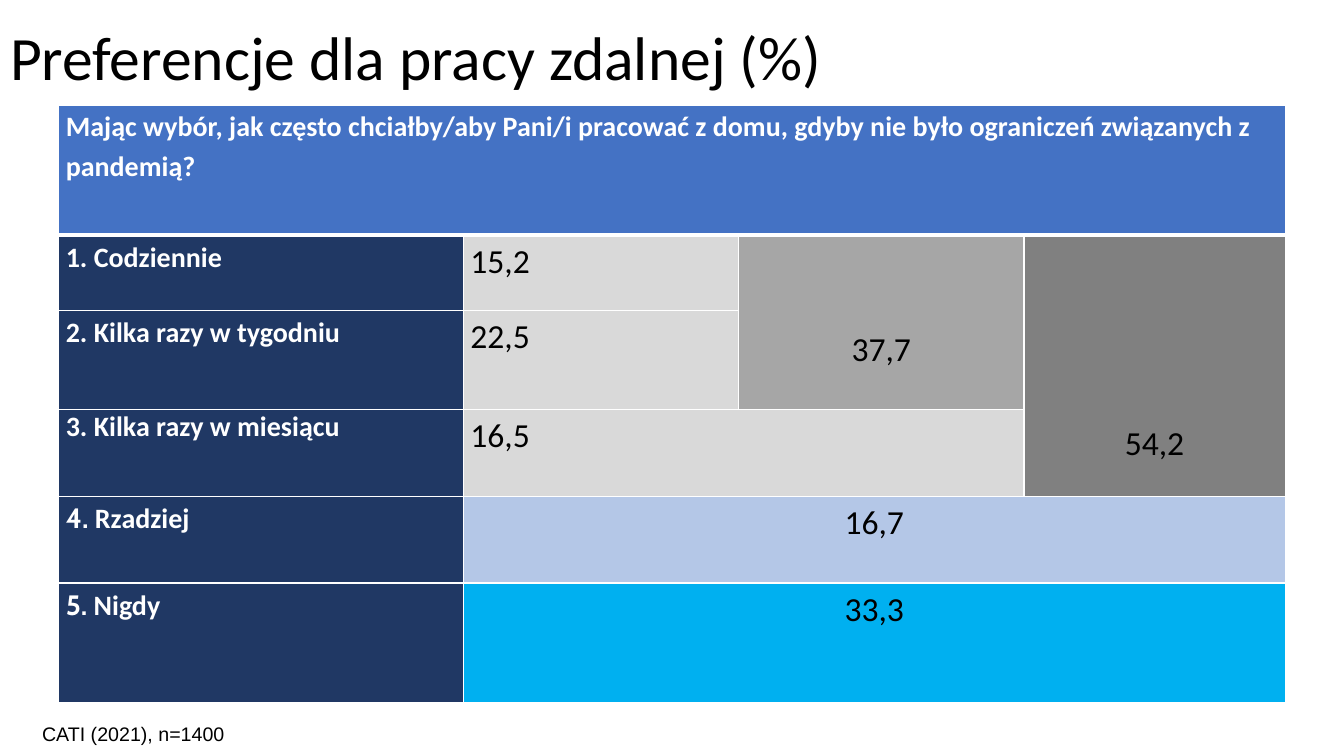
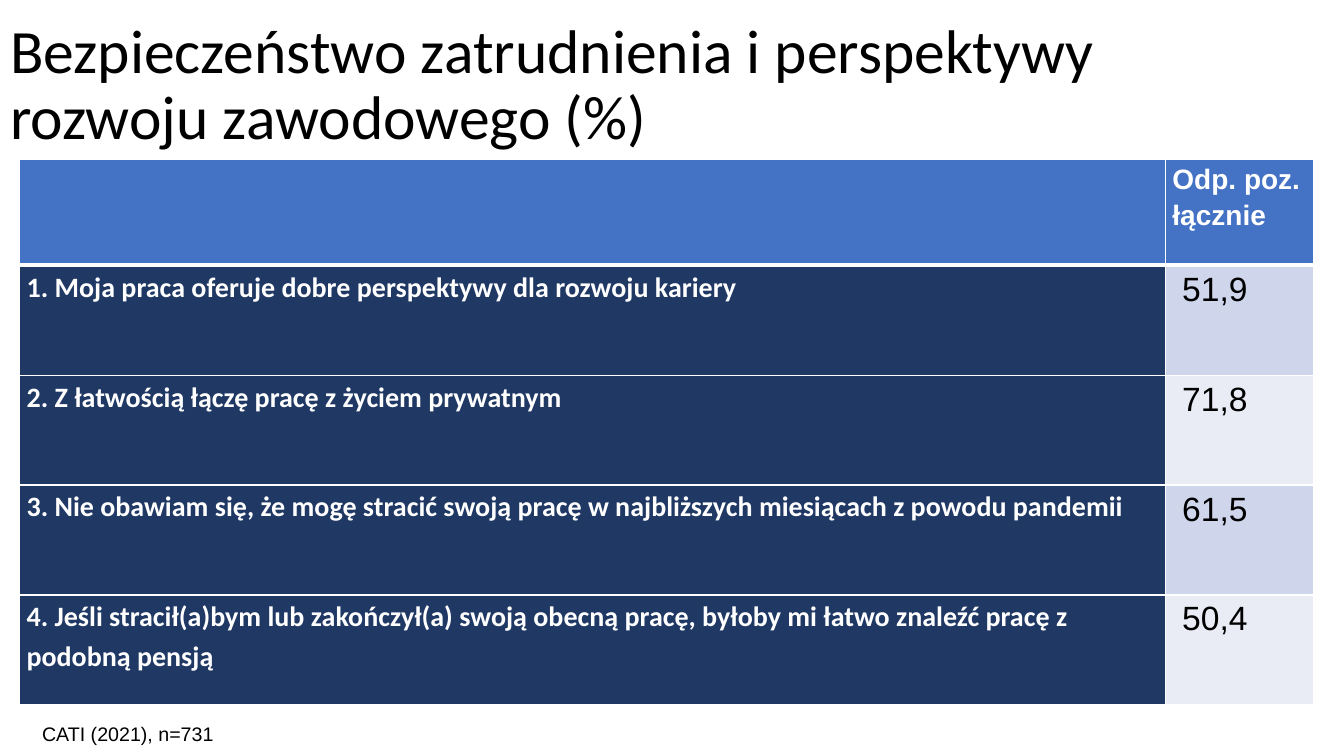
from dataclasses import dataclass

import lxml.etree
import pptx
import pptx.dml.color
import pptx.enum.text
import pptx.oxml.ns
import pptx.util

Pt = pptx.util.Pt
Align = pptx.enum.text.PP_ALIGN
Anchor = pptx.enum.text.MSO_ANCHOR


@dataclass(frozen=True)
class Theme:
    black: str = "000000"
    white: str = "FFFFFF"
    header: str = "4472C4"
    label: str = "203864"
    light_grey: str = "D9D9D9"
    middle_grey: str = "A6A6A6"
    dark_grey: str = "808080"
    pale_blue: str = "B4C7E7"
    bright_blue: str = "00B0F0"
    bands: tuple = ("CFD5EA", "E9EBF5")
    main_font: str = "Calibri"
    note_font: str = "Arial"
    number_font: str = "Cabin"
    title_size: int = 44
    label_size: int = 20
    value_size: int = 24
    note_size: int = 14
    border: int = 1
    header_border: int = 3
    line_spacing: float = 1.15


THEME = Theme()


@dataclass
class Cell:
    """One table cell; runs are (text, font or None) pairs."""
    runs: tuple
    fill: str
    size: int
    colour: str
    bold: bool
    font: str = THEME.main_font
    align: Align = Align.LEFT
    rows: int = 1
    columns: int = 1
    top: float = 0
    left: float = 5
    line_spacing: float = THEME.line_spacing


def heading(text, **options):
    return Cell(((text, None),), THEME.header, THEME.label_size, THEME.white, True, **options)


def label(text, number="", **options):
    runs = ((number, THEME.number_font), (text, None)) if number else ((text, None),)
    return Cell(runs, THEME.label, THEME.label_size, THEME.white, True, **options)


def value(text, fill, **options):
    return Cell(((text, None),), fill, THEME.value_size, THEME.black, False, **options)


def rgb(colour):
    return pptx.dml.color.RGBColor.from_string(colour)


def style_font(font, name, size, colour, bold=False):
    font.name, font.size, font.bold = name, Pt(size), bold
    font.color.rgb = rgb(colour)


def add_title(slide, text, box):
    title = slide.shapes.title
    title.left, title.top, title.width, title.height = (Pt(length) for length in box)
    frame = title.text_frame
    frame.text = text
    frame.word_wrap = True
    frame.auto_size = pptx.enum.text.MSO_AUTO_SIZE.NONE
    frame.vertical_anchor = Anchor.MIDDLE
    paragraph = frame.paragraphs[0]
    paragraph.alignment, paragraph.line_spacing = Align.LEFT, 0.9
    style_font(paragraph.font, THEME.main_font, THEME.title_size, THEME.black)


def add_source_note(slide, text):
    note = slide.shapes.add_textbox(Pt(23), Pt(508.5), Pt(360), Pt(31.5))
    frame = note.text_frame
    frame.text = text
    frame.word_wrap = True
    frame.vertical_anchor = Anchor.MIDDLE
    style_font(frame.paragraphs[0].font, THEME.note_font, THEME.note_size, THEME.black)


def set_borders(table_cell, top, bottom):
    """Line elements must stand before the fill in the cell properties."""
    qualified = pptx.oxml.ns.qn
    properties = table_cell._tc.get_or_add_tcPr()
    widths = {"a:lnL": THEME.border, "a:lnR": THEME.border, "a:lnT": top, "a:lnB": bottom}
    for position, (tag, width) in enumerate(widths.items()):
        line = lxml.etree.Element(qualified(tag), w=str(int(Pt(width))))
        fill = lxml.etree.SubElement(line, qualified("a:solidFill"))
        lxml.etree.SubElement(fill, qualified("a:srgbClr"), val=THEME.white)
        properties.insert(position, line)


def fill_cell(table_cell, cell):
    table_cell.fill.solid()
    table_cell.fill.fore_color.rgb = rgb(cell.fill)
    table_cell.margin_left, table_cell.margin_right = Pt(cell.left), Pt(5)
    table_cell.margin_top, table_cell.margin_bottom = Pt(cell.top), Pt(0)
    paragraph = table_cell.text_frame.paragraphs[0]
    paragraph.alignment, paragraph.line_spacing = cell.align, cell.line_spacing
    style_font(paragraph.font, cell.font, cell.size, cell.colour, cell.bold)
    for text, font in cell.runs:
        if text:
            run = paragraph.add_run()
            run.text = text
            if font:
                run.font.name = font


def add_survey_table(slide, left, top, columns, rows, cells):
    """cells maps (row, column) to the Cell that starts there."""
    frame = slide.shapes.add_table(len(rows), len(columns), Pt(left), Pt(top),
                                   Pt(sum(columns)), Pt(sum(rows)))
    table = frame.table
    table.first_row = table.horz_banding = False
    for column, width in zip(table.columns, columns):
        column.width = Pt(width)
    for row, height in zip(table.rows, rows):
        row.height = Pt(height)
    for (row, column), cell in cells.items():
        origin = table.cell(row, column)
        if cell.rows * cell.columns > 1:
            origin.merge(table.cell(row + cell.rows - 1, column + cell.columns - 1))
        fill_cell(origin, cell)
    for row in range(len(rows)):
        for column in range(len(columns)):
            set_borders(table.cell(row, column),
                        THEME.header_border if row == 1 else THEME.border,
                        THEME.header_border if row == 0 else THEME.border)


def add_survey_slide(presentation, title, title_box, note, **table):
    slide = presentation.slides.add_slide(presentation.slide_layouts[5])
    add_title(slide, title, title_box)
    add_survey_table(slide, **table)
    add_source_note(slide, note)


def add_remote_work_slide(presentation):
    centre = Align.CENTER
    cells = {
        (0, 0): heading("Mając wybór, jak często chciałby/aby Pani/i pracować z domu, "
                        "gdyby nie było ograniczeń związanych z pandemią?", columns=4),
        # Answers
        (1, 0): label("1. Codziennie"),
        (2, 0): label("2. Kilka razy w tygodniu"),
        (3, 0): label("3. Kilka razy w miesiącu", line_spacing=1.0),
        (4, 0): label("Rzadziej", number="4. "),
        (5, 0): label("Nigdy", number="5. "),
        # Shares
        (1, 1): value("15,2", THEME.light_grey),
        (2, 1): value("22,5", THEME.light_grey),
        (3, 1): value("16,5", THEME.light_grey, columns=2),
        (4, 1): value("16,7", THEME.pale_blue, columns=3, align=centre),
        (5, 1): value("33,3", THEME.bright_blue, columns=3, align=centre),
        # Running totals
        (1, 2): value("37,7", THEME.middle_grey, rows=2, align=centre, top=63),
        (1, 3): value("54,2", THEME.dark_grey, rows=3, align=centre, top=130),
    }
    add_survey_slide(presentation, "Preferencje dla pracy zdalnej (%)", (0, 0, 828, 87),
                     "CATI (2021), n=1400", left=42, top=75,
                     columns=[289, 196.5, 204, 186.5],
                     rows=[93, 54, 70.5, 62, 62, 85.5], cells=cells)


def add_job_security_slide(presentation):
    answers = [
        ("1. Moja praca oferuje dobre perspektywy dla rozwoju kariery", "51,9"),
        ("2. Z łatwością łączę pracę z życiem prywatnym", "71,8"),
        ("3. Nie obawiam się, że mogę stracić swoją pracę w najbliższych miesiącach "
         "z powodu pandemii", "61,5"),
        ("4. Jeśli stracił(a)bym lub zakończył(a) swoją obecną pracę, byłoby mi łatwo "
         "znaleźć pracę z podobną pensją", "50,4"),
    ]
    cells = {(0, 0): heading(""),
             (0, 1): heading("Odp. poz. łącznie", font=THEME.note_font)}
    for row, (statement, share) in enumerate(answers, start=1):
        cells[row, 0] = label(statement)
        cells[row, 1] = value(share, THEME.bands[(row - 1) % 2],
                              font=THEME.note_font, left=12)
    add_survey_slide(presentation,
                     "Bezpieczeństwo zatrudnienia i perspektywy rozwoju zawodowego (%)",
                     (0, 9.5, 828, 104.5), "CATI (2021), n=731", left=14, top=114,
                     columns=[818.5, 106], rows=[75.5] + [78.5] * len(answers), cells=cells)


def main():
    presentation = pptx.Presentation()
    presentation.slide_width, presentation.slide_height = Pt(960), Pt(540)
    add_remote_work_slide(presentation)
    add_job_security_slide(presentation)
    presentation.save("out.pptx")


if __name__ == "__main__":
    main()
